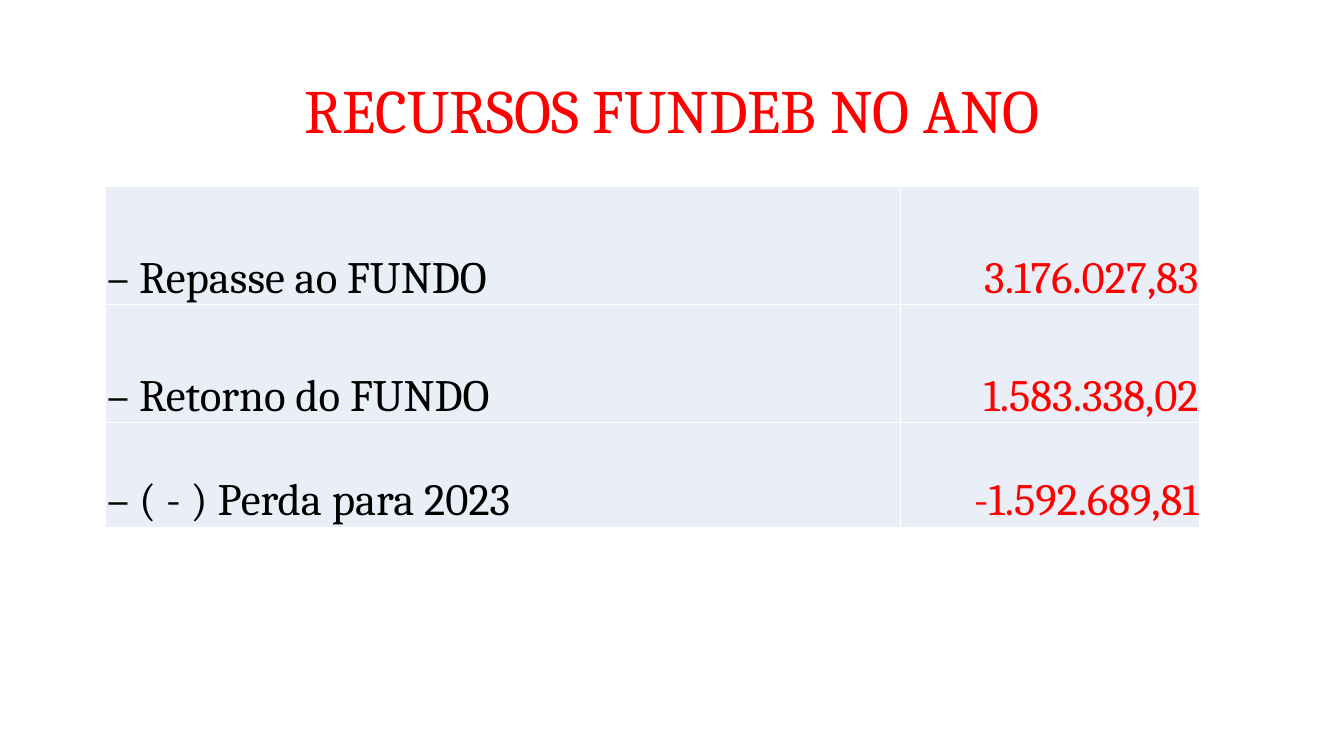
from dataclasses import dataclass

from lxml import etree
from pptx import Presentation
from pptx.dml.color import RGBColor
from pptx.enum import text
from pptx.oxml import ns
from pptx.util import Inches, Pt


@dataclass(frozen=True)
class Theme:
    font: str = "Cambria"
    red: str = "FF0000"
    black: str = "000000"
    band: str = "EAEFF7"
    rule: str = "FFFFFF"
    head: int = 44
    body: int = 32


theme = Theme()


def add_run(para, words, size, color):
    run = para.add_run()
    run.text = words
    run.font.name = theme.font
    run.font.size = Pt(size)
    run.font.color.rgb = RGBColor.from_string(color)


def add_rules(cell):
    """Draw a thin line on all four sides; call before the cell is filled."""
    props = cell._tc.get_or_add_tcPr()
    for side in ("a:lnL", "a:lnR", "a:lnT", "a:lnB"):
        line = etree.SubElement(props, ns.qn(side), w=str(Pt(1)))
        fill = etree.SubElement(line, ns.qn("a:solidFill"))
        etree.SubElement(fill, ns.qn("a:srgbClr"), val=theme.rule)


deck = Presentation()
deck.slide_width, deck.slide_height = Inches(13.33), Inches(7.5)
slide = deck.slides.add_slide(deck.slide_layouts[5])

# Title
title = slide.shapes.title
title.left, title.top = Inches(0.92), Inches(0.4)
title.width, title.height = Inches(11.5), Inches(1.45)
title.text_frame.vertical_anchor = text.MSO_ANCHOR.MIDDLE
para = title.text_frame.paragraphs[0]
para.alignment = text.PP_ALIGN.CENTER
para.line_spacing = 0.9
add_run(para, "RECURSOS FUNDEB NO ANO", theme.head, theme.red)

# Fund table
funds = [
    ("– Repasse ao FUNDO", "3.176.027,83"),
    ("– Retorno do FUNDO", "1.583.338,02"),
    ("– ( - ) Perda para 2023", "-1.592.689,81"),
]
widths = (7.88, 2.97)
heights = (1.17, 1.17, 1.04)
looks = (
    (text.PP_ALIGN.LEFT, theme.black),
    (text.PP_ALIGN.RIGHT, theme.red),
)

table = slide.shapes.add_table(
    len(funds), len(widths), Inches(1.05), Inches(1.85),
    Inches(sum(widths)), Inches(sum(heights)),
).table
table.first_row = table.horz_banding = False
for col, width in zip(table.columns, widths):
    col.width = Inches(width)

for row, height, fund in zip(table.rows, heights, funds):
    row.height = Inches(height)
    for cell, words, (align, color) in zip(row.cells, fund, looks):
        add_rules(cell)
        cell.fill.solid()
        cell.fill.fore_color.rgb = RGBColor.from_string(theme.band)
        cell.vertical_anchor = text.MSO_ANCHOR.BOTTOM
        cell.margin_left = cell.margin_right = cell.margin_top = Inches(0.01)
        cell.margin_bottom = 0
        para = cell.text_frame.paragraphs[0]
        para.alignment = align
        add_run(para, words, theme.body, color)

deck.save("out.pptx")
